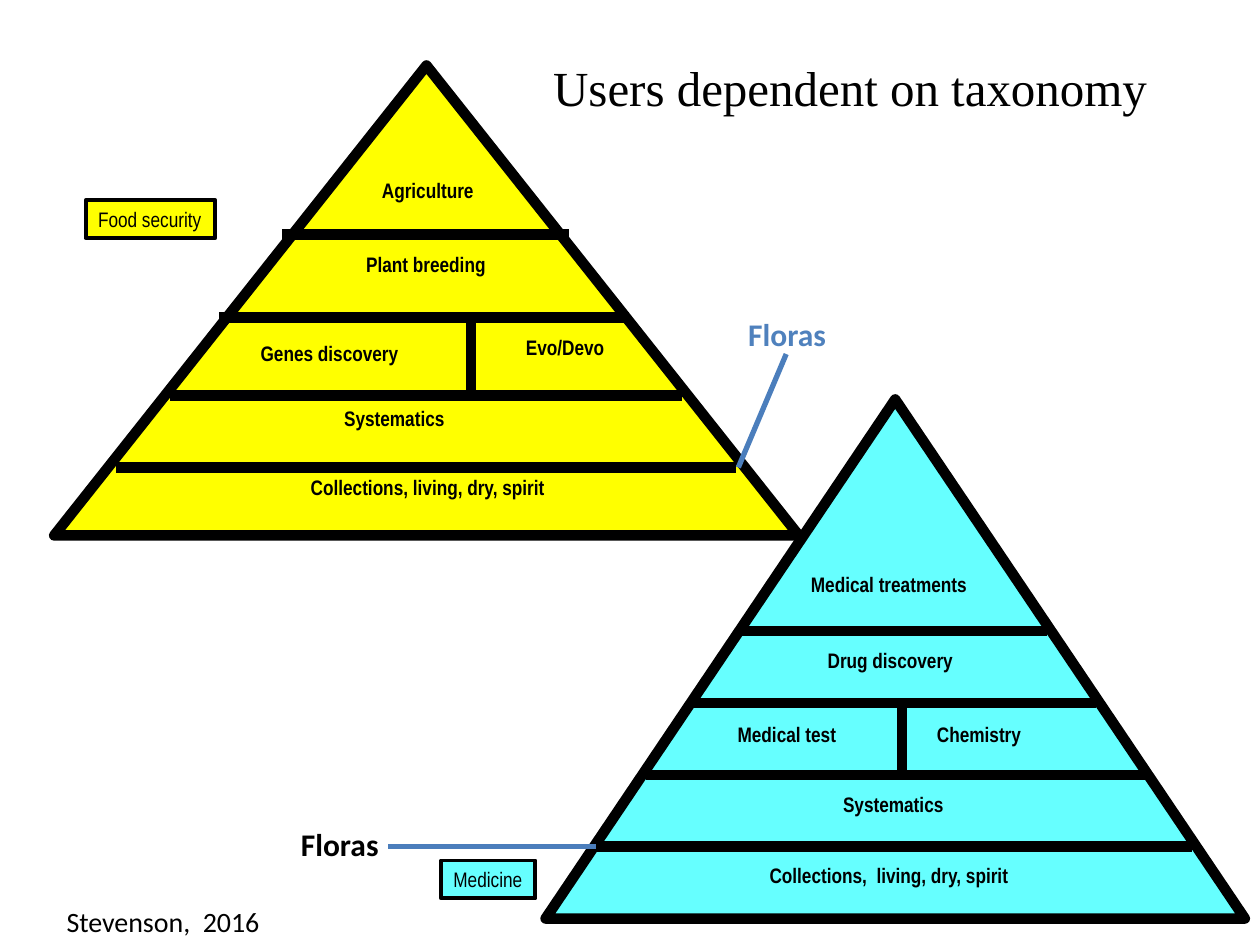
from lxml.etree import SubElement
from pptx import Presentation
from pptx.dml.color import RGBColor
from pptx.enum.shapes import MSO_CONNECTOR, MSO_SHAPE
from pptx.enum.text import MSO_ANCHOR, MSO_AUTO_SIZE, PP_ALIGN
from pptx.oxml.ns import qn
from pptx.util import Inches, Pt

BLACK = RGBColor(0x00, 0x00, 0x00)
YELLOW = RGBColor(0xFF, 0xFF, 0x00)
CYAN = RGBColor(0x66, 0xFF, 0xFF)
BLUE = RGBColor(0x4F, 0x81, 0xBD)
LINE_BLUE = RGBColor(0x4B, 0x7E, 0xBC)

deck = Presentation()
deck.slide_width, deck.slide_height = Inches(10), Inches(7.5)
page = deck.slides.add_slide(deck.slide_layouts[5])


def write(text, left, top, width, height=0.3, box=None, size=12, font="Arial Narrow",
          color=BLACK, bold=False, align=PP_ALIGN.LEFT, wrap=False, fill=None, border=None):
    box = box or page.shapes.add_textbox(0, 0, 0, 0)
    box.left, box.top = Inches(left), Inches(top)
    box.width, box.height = Inches(width), Inches(height)
    if fill is not None:
        box.fill.solid()
        box.fill.fore_color.rgb = fill
    if border:
        box.line.color.rgb = BLACK
        box.line.width = Pt(border)
    frame = box.text_frame
    frame.word_wrap = wrap
    frame.auto_size = MSO_AUTO_SIZE.SHAPE_TO_FIT_TEXT
    frame.vertical_anchor = MSO_ANCHOR.TOP
    para = frame.paragraphs[0]
    para.alignment = align
    span = para.add_run()
    span.text = text
    span.font.name, span.font.size, span.font.bold = font, Pt(size), bold
    span.font.color.rgb = color


def draw_line(x1, y1, x2, y2, color=BLACK, width=6):
    line = page.shapes.add_connector(
        MSO_CONNECTOR.STRAIGHT, Inches(x1), Inches(y1), Inches(x2), Inches(y2))
    line.line.color.rgb = color
    line.line.width = Pt(width)
    SubElement(line._element.spPr, qn("a:effectLst"))


write("Users dependent on taxonomy", 4.29, 0.41, 5.28, 0.57, box=page.shapes.title,
      size=28, font="Times New Roman", wrap=True)

pyramids = [
    (YELLOW, (0.43, 0.52, 5.91, 3.73),
     [("Systematics", 1.53, 3.17, 3.2, True),
      ("Collections, living, dry, spirit", 2.35, 3.72, 2.09, False),
      ("Agriculture", 2.35, 1.36, 2.09, True),
      ("Genes discovery", 1.49, 2.65, 2.25, True),
      ("Evo/Devo", 4.03, 2.61, 0.91, False),
      ("Plant breeding ", 2.8, 1.95, 1.2, False)],
     [(1.74, 2.52, 4.99, 2.52), (2.24, 1.86, 4.52, 1.86), (3.74, 2.55, 3.74, 3.14),
      (0.92, 3.71, 5.84, 3.71), (1.35, 3.14, 5.41, 3.14)]),
    (CYAN, (4.33, 3.17, 5.55, 4.12),
     [("Systematics", 6.01, 6.23, 2.16, True),
      ("Medical treatments", 6.09, 4.49, 1.93, True),
      ("Medical test", 5.75, 5.68, 0.99, False),
      ("Chemistry", 7.33, 5.68, 0.88, False),
      ("Drug discovery ", 6.46, 5.09, 1.25, False),
      ("Collections,  living, dry, spirit ", 5.99, 6.8, 2.17, False)],
     [(5.51, 5.58, 8.7, 5.58), (5.86, 5.01, 8.31, 5.01), (7.16, 5.58, 7.16, 6.15),
      (4.74, 6.72, 9.46, 6.72), (5.13, 6.15, 9.09, 6.15)]),
]
for color, bounds, labels, dividers in pyramids:
    pyramid = page.shapes.add_shape(MSO_SHAPE.ISOSCELES_TRIANGLE, *map(Inches, bounds))
    pyramid.shadow.inherit = False
    pyramid.fill.solid()
    pyramid.fill.fore_color.rgb = color
    pyramid.line.color.rgb = BLACK
    pyramid.line.width = Pt(6)
    for text, left, top, width, wrap in labels:
        write(text, left, top, width, bold=True, align=PP_ALIGN.CENTER, wrap=wrap)
    for divider in dividers:
        draw_line(*divider)

write("Medicine", 3.5, 6.83, 0.75, fill=CYAN, border=2.25)
write("Food security", 0.68, 1.59, 1.03, fill=YELLOW, border=2.25)
write("Stevenson,  2016", 0.43, 7.13, 1.76, 0.37, size=16, font="Calibri")

write("Floras", 2.29, 6.5, 0.83, 0.4, size=18, font="Calibri", bold=True)
draw_line(3.08, 6.72, 4.73, 6.72, color=LINE_BLUE, width=3)
write("Floras", 5.84, 2.45, 0.83, 0.4, size=18, font="Calibri", bold=True, color=BLUE)
draw_line(5.86, 3.71, 6.24, 2.81, color=LINE_BLUE, width=3)

deck.save("out.pptx")
